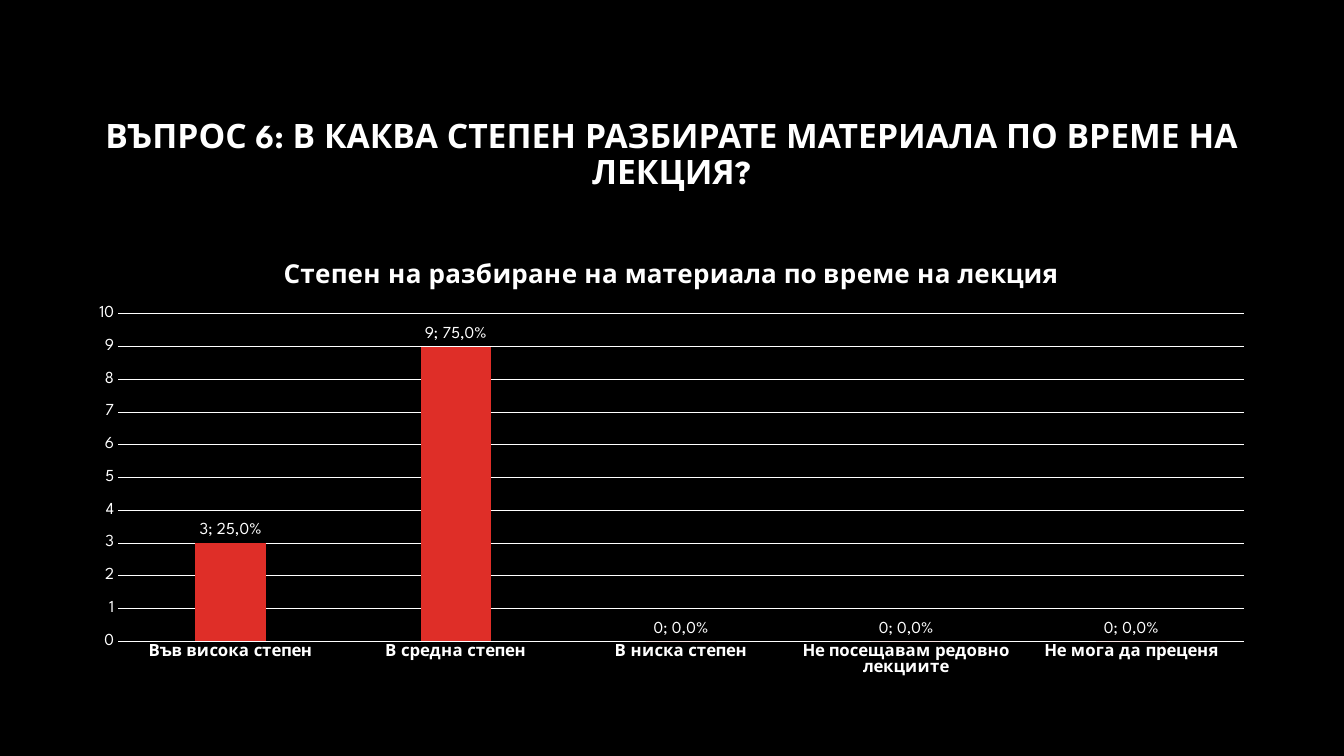
from dataclasses import dataclass

from pptx import Presentation
from pptx.chart.chart import Chart
from pptx.chart.data import CategoryChartData
from pptx.dml.color import RGBColor
from pptx.enum.chart import XL_CHART_TYPE, XL_LABEL_POSITION, XL_TICK_MARK
from pptx.enum.text import MSO_ANCHOR, MSO_AUTO_SIZE, PP_ALIGN
from pptx.slide import Slide
from pptx.text.text import Font
from pptx.util import Cm, Pt

COLORS = {"background": "000000", "text": "FFFFFF", "bar": "DF2E28"}
FONT_NAME = "League Spartan"
QUESTION = "ВЪПРОС 6: В КАКВА СТЕПЕН РАЗБИРАТЕ МАТЕРИАЛА ПО ВРЕМЕ НА ЛЕКЦИЯ?"
CHART_TITLE = "Степен на разбиране на материала по време на лекция"
LEFT, WIDTH = Cm(1.9), Cm(30.05)


@dataclass
class Answer:
    text: str
    votes: int


ANSWERS = [
    Answer("Във висока степен", 3),
    Answer("В средна степен", 9),
    Answer("В ниска степен", 0),
    Answer("Не посещавам редовно лекциите", 0),
    Answer("Не мога да преценя", 0),
]


def color(name: str) -> RGBColor:
    return RGBColor.from_string(COLORS[name])


def set_attributes(target: object, values: dict) -> None:
    for name, value in values.items():
        setattr(target, name, value)


def format_font(font: Font, size: float, bold: bool = False) -> None:
    set_attributes(font, {"name": FONT_NAME, "size": Pt(size), "bold": bold})
    font.color.rgb = color("text")


def add_title(slide: Slide) -> None:
    title = slide.shapes.title
    set_attributes(title, {"left": LEFT, "top": Cm(2.13), "width": WIDTH, "height": Cm(3.58)})
    frame = title.text_frame
    frame.text = QUESTION
    set_attributes(frame, {"vertical_anchor": MSO_ANCHOR.MIDDLE, "word_wrap": True,
                           "auto_size": MSO_AUTO_SIZE.NONE})
    paragraph = frame.paragraphs[0]
    set_attributes(paragraph, {"alignment": PP_ALIGN.CENTER, "line_spacing": 0.9})
    format_font(paragraph.runs[0].font, 24, bold=True)


def add_answer_chart(slide: Slide) -> Chart:
    data = CategoryChartData()
    data.categories = [answer.text for answer in ANSWERS]
    data.add_series(CHART_TITLE, [answer.votes for answer in ANSWERS])
    chart = slide.shapes.add_chart(XL_CHART_TYPE.COLUMN_CLUSTERED,
                                   LEFT, Cm(6.1), WIDTH, Cm(11.18), data).chart
    chart.has_legend = False
    format_font(chart.font, 10)
    title_frame = chart.chart_title.text_frame
    title_frame.text = CHART_TITLE
    format_font(title_frame.paragraphs[0].runs[0].font, 18.6, bold=True)
    return chart


def format_axes(chart: Chart) -> None:
    categories, values = chart.category_axis, chart.value_axis
    for axis in (categories, values):
        set_attributes(axis, {"major_tick_mark": XL_TICK_MARK.NONE,
                              "minor_tick_mark": XL_TICK_MARK.NONE})
        format_font(axis.tick_labels.font, 12, bold=axis is categories)
    set_attributes(values, {"minimum_scale": 0, "maximum_scale": 10, "major_unit": 1})
    values.format.line.fill.background()
    for line in (categories.format.line, values.major_gridlines.format.line):
        line.width = Pt(0.75)
        line.color.rgb = color("text")


def format_columns(chart: Chart) -> None:
    """Colour the columns and label each with its votes and share."""
    plot = chart.plots[0]
    set_attributes(plot, {"gap_width": 219, "overlap": -27, "vary_by_categories": False})
    series = plot.series[0]
    series.format.fill.solid()
    series.format.fill.fore_color.rgb = color("bar")
    labels = series.data_labels
    set_attributes(labels, {"show_value": True, "position": XL_LABEL_POSITION.OUTSIDE_END})
    format_font(labels.font, 12)

    total = sum(answer.votes for answer in ANSWERS)
    for index, answer in enumerate(ANSWERS):
        share = f"{answer.votes / total:.1%}".replace(".", ",")
        label = series.points[index].data_label
        label.text_frame.text = f"{answer.votes}; {share}"
        label.position = XL_LABEL_POSITION.OUTSIDE_END
        format_font(label.text_frame.paragraphs[0].runs[0].font, 12)


def main() -> None:
    presentation = Presentation()
    set_attributes(presentation, {"slide_width": Cm(33.87), "slide_height": Cm(19.05)})
    slide = presentation.slides.add_slide(presentation.slide_layouts.get_by_name("Title Only"))
    slide.background.fill.solid()
    slide.background.fill.fore_color.rgb = color("background")
    add_title(slide)
    chart = add_answer_chart(slide)
    format_axes(chart)
    format_columns(chart)
    presentation.save("out.pptx")


if __name__ == "__main__":
    main()
